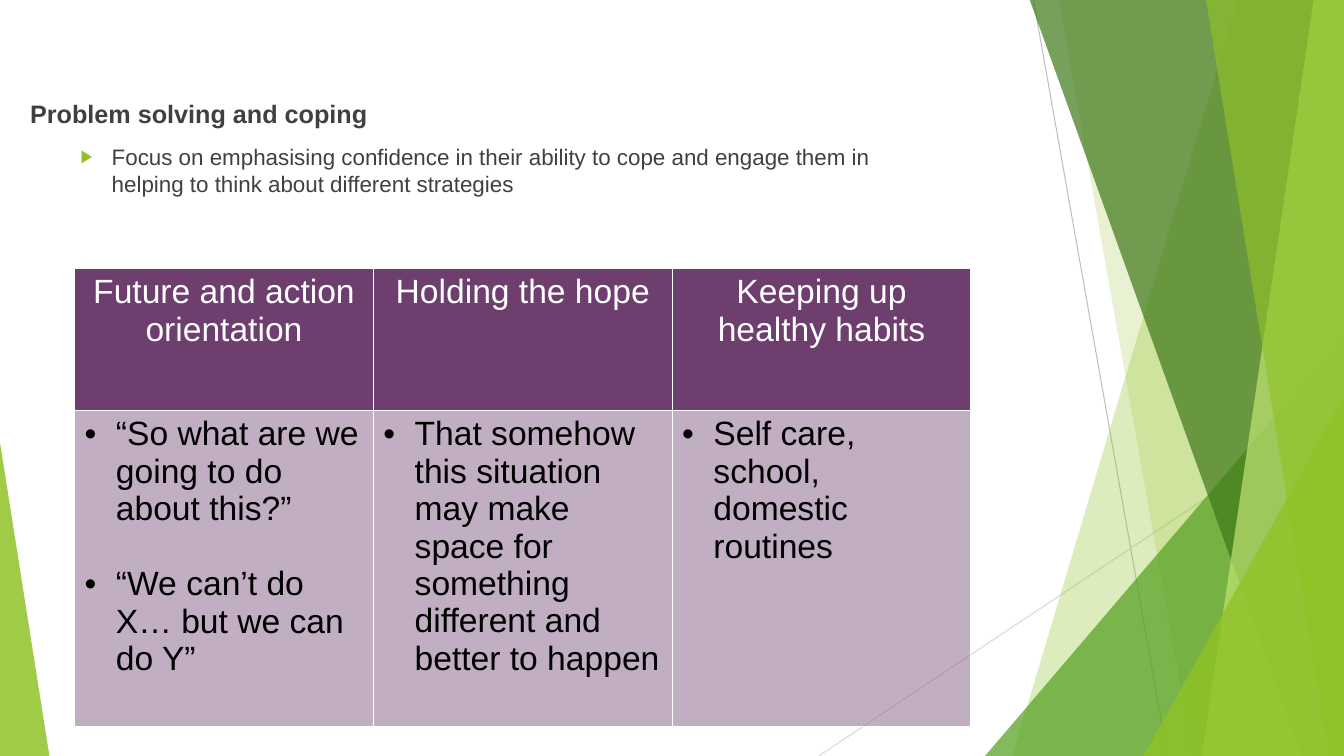
"""Build a slide on problem solving and coping with a three-column table."""
import pptx
import pptx.util
import pptx.dml.color
import pptx.enum.shapes
import pptx.enum.text
import pptx.oxml
import pptx.oxml.ns

Inches, Pt, qn = pptx.util.Inches, pptx.util.Pt, pptx.oxml.ns.qn
SPACE = 'xmlns:a="http://schemas.openxmlformats.org/drawingml/2006/main"'


def paint(fill, hue, root=None, alpha=100):
    fill.solid()
    fill.fore_color.rgb = pptx.dml.color.RGBColor.from_string(hue)
    if alpha < 100:
        clear = pptx.oxml.parse_xml(f'<a:alpha {SPACE} val="{alpha * 1000}"/>')
        root.find(".//" + qn("a:srgbClr")).append(clear)


def bullet(para, left, mark, hue, size):
    props = para._p.get_or_add_pPr()
    props.set("marL", str(Inches(left)))
    props.set("indent", str(Inches(-0.31)))
    for part in (
        f'<a:buClr {SPACE}><a:srgbClr val="{hue}"/></a:buClr>',
        f'<a:buSzPct {SPACE} val="{size * 1000}"/>',
        f'<a:buFont {SPACE} typeface="Arial"/>',
        f'<a:buChar {SPACE} char="{mark}"/>',
    ):
        props.append(pptx.oxml.parse_xml(part))


deck = pptx.Presentation()
deck.slide_width, deck.slide_height = Inches(13.33), Inches(7.5)
slide = deck.slides.add_slide(deck.slide_layouts[6])
shapes = slide.shapes

for ends, hue in (((10.25, 0, 11.58, 7.5), "BFBFBF"), ((13.33, 4.03, 8.12, 7.5), "D9D9D9")):
    line = shapes.add_connector(
        pptx.enum.shapes.MSO_CONNECTOR.STRAIGHT, *[Inches(n) for n in ends])
    line.line.width = Pt(0.75)
    paint(line.line.fill, hue)
    line._element.spPr.append(pptx.oxml.parse_xml(f"<a:effectLst {SPACE}/>"))

# pragma: no cover
panels = [
    ("band", (12.28, 10.04), "90C226", 30),
    ("band", (10.5, 11.83), "90C226", 20),
    ("peak", (9.77, 3.33, 3.56, 4.17, 1), "54A021", 72),
    ("band", (10.21, 12.91), "3F7819", 70),
    ("band", (13.03, 11.92), "C0E474", 70),
    ("band", (11.96, 13.18), "90C226", 65),
    ("peak", (11.34, 3.93, 1.99, 3.57, 1), "90C226", 80),
    ("peak", (0, 4.39, 0.49, 3.11, 0), "90C226", 85),
]
for kind, place, hue, alpha in panels:
    if kind == "band":
        top, base = place
        path = shapes.build_freeform(Inches(top), Inches(-0.01))
        path.add_line_segments([
            (Inches(x), Inches(y)) for x, y in ((13.33, -0.01), (13.33, 7.5), (base, 7.5))])
        panel = path.convert_to_shape()
    else:
        *box, apex = place
        panel = shapes.add_shape(
            pptx.enum.shapes.MSO_SHAPE.ISOSCELES_TRIANGLE, *[Inches(n) for n in box])
        panel.adjustments[0] = apex
    panel.shadow.inherit = False
    panel.line.fill.background()
    paint(panel.fill, hue, panel._element.spPr, alpha)

body = shapes.add_textbox(Inches(0.2), Inches(0.93), Inches(8.68), Inches(1.45)).text_frame
body.word_wrap = True
lines = [
    ("Problem solving and coping", {"size": Pt(18), "bold": True}),
    ("Focus on emphasising confidence in their ability to cope and engage them in "
     "helping to think about different strategies", {"size": Pt(16), "bold": False}),
]
for i, (text, style) in enumerate(lines):
    para = body.add_paragraph() if i else body.paragraphs[0]
    para.space_before = Pt(10)
    run = para.add_run()
    run.text = text
    for key, value in {"name": "Arial", **style}.items():
        setattr(run.font, key, value)
    paint(run.font.fill, "404040")
bullet(body.paragraphs[1], 0.81, "▶", "90C226", 80)

rows = [
    [["Future and action orientation"], ["Holding the hope"], ["Keeping up healthy habits"]],
    [["“So what are we going to do about this?”", "“We can’t do X… but we can do Y”"],
     ["That somehow this situation may make space for something different and better to happen"],
     ["Self care, school, domestic routines"]],
]
table = shapes.add_table(2, 3, Inches(0.74), Inches(2.66), Inches(8.89), Inches(4.55)).table
table.first_row = table.horz_banding = False
for row, high in zip(table.rows, (1.41, 3.14)):
    row.height = Inches(high)
looks = [("6E3E6E", 100, "FFFFFF"), ("8D678E", 53, "000000")]
for r, (row, (hue, alpha, ink)) in enumerate(zip(rows, looks)):
    for c, texts in enumerate(row):
        cell = table.cell(r, c)
        props = cell._tc.get_or_add_tcPr()
        paint(cell.fill, hue, props, alpha)
        for i, side in enumerate("LRTB"):
            props.insert(i, pptx.oxml.parse_xml(
                f'<a:ln{side} {SPACE} w="12700"><a:solidFill><a:srgbClr val="FFFFFF"/>'
                f'</a:solidFill></a:ln{side}>'))
        for i, text in enumerate(texts):
            para = cell.text_frame.add_paragraph() if i else cell.text_frame.paragraphs[0]
            run = para.add_run()
            run.text = text
            for key, value in {"name": "Arial", "size": Pt(24), "bold": False}.items():
                setattr(run.font, key, value)
            paint(run.font.fill, ink)
            if r:
                para.space_before = Pt(27 if i else 0)
                bullet(para, 0.31, "•", ink, 100)
            else:
                para.alignment = pptx.enum.text.PP_ALIGN.CENTER

deck.save("out.pptx")
